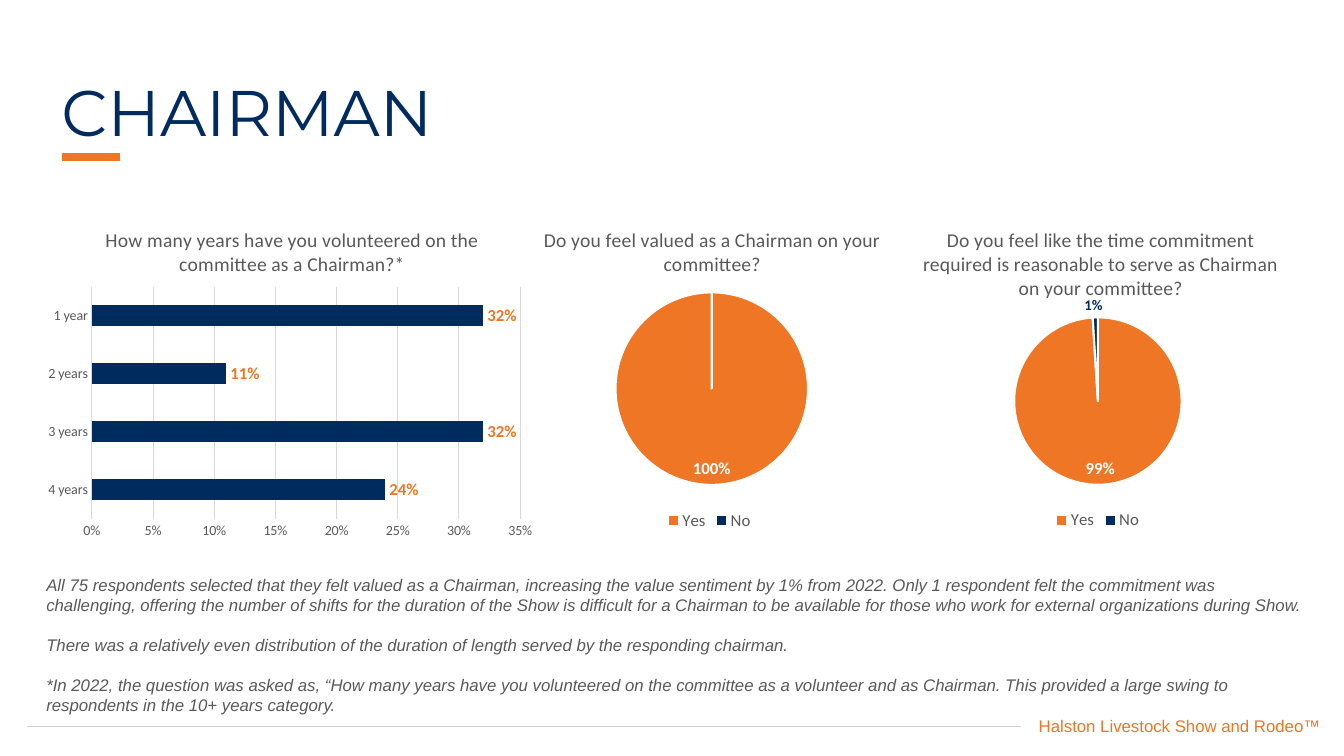
from dataclasses import dataclass

from lxml.etree import SubElement
from pptx import Presentation
from pptx.chart.chart import Chart
from pptx.chart.data import CategoryChartData
from pptx.dml.color import RGBColor
from pptx.enum.chart import XL_CHART_TYPE, XL_LABEL_POSITION, XL_LEGEND_POSITION, XL_TICK_MARK
from pptx.enum.text import MSO_ANCHOR, MSO_AUTO_SIZE, PP_ALIGN
from pptx.oxml.ns import qn
from pptx.oxml.xmlchemy import BaseOxmlElement
from pptx.slide import Slide
from pptx.text.text import Font, TextFrame
from pptx.util import Pt

NAVY = RGBColor(0x00, 0x2B, 0x5F)
ORANGE = RGBColor(0xEE, 0x76, 0x24)
GRAY = RGBColor(0x59, 0x59, 0x59)
SILVER = RGBColor(0xD1, 0xD3, 0xD4)
GRID = RGBColor(0xD9, 0xD9, 0xD9)
WHITE = RGBColor(0xFF, 0xFF, 0xFF)

Box = tuple[float, float, float, float]


@dataclass
class Rule:
    """A level line."""
    left: float
    right: float
    top: float
    color: RGBColor
    width: float


@dataclass
class Graph:
    """A chart with its place, its data and its inner layout in shares."""
    kind: XL_CHART_TYPE
    box: Box
    title: str
    names: list[str]
    values: list[float]
    head: tuple[float, float]
    plot: Box


RULES = [
    Rule(19.5, 729.5, 519, SILVER, 1),
    Rule(44, 86, 112, ORANGE, 6),
]
GRAPHS = [
    Graph(XL_CHART_TYPE.PIE, (339, 147.5, 335.5, 234.5),
          "Do you feel valued as a Chairman on your committee?",
          ["Yes", "No"], [1, 0], (0.14, 0.05), (0.3, 0.26, 0.41, 0.59)),
    Graph(XL_CHART_TYPE.PIE, (616.5, 147, 335.5, 234.5),
          "Do you feel like the time commitment required is reasonable "
          "to serve as Chairman on your committee?",
          ["Yes", "No"], [0.99, 0.01], (0.12, 0.05), (0.32, 0.34, 0.36, 0.51)),
    Graph(XL_CHART_TYPE.BAR_CLUSTERED, (26, 147, 360, 240.5),
          "How many years have you volunteered on the committee as a Chairman?*",
          ["4 years", "3 years", "2 years", "1 year"], [0.24, 0.32, 0.11, 0.32],
          (0.13, 0.05), (0.11, 0.24, 0.85, 0.69)),
]
NOTES = [
    "All 75 respondents selected that they felt valued as a Chairman, increasing the value "
    "sentiment by 1% from 2022. Only 1 respondent felt the commitment was challenging, offering "
    "the number of shifts for the duration of the Show is difficult for a Chairman to be "
    "available for those who work for external organizations during Show.",
    "There was a relatively even distribution of the duration of length served by the "
    "responding chairman.",
    "*In 2022, the question was asked as, “How many years have you volunteered on the committee "
    "as a volunteer and as Chairman. This provided a large swing to respondents in the 10+ "
    "years category.",
]


def style(font: Font, size: float, color: RGBColor, name: str = "Calibri",
          bold: bool = False, italic: bool = False) -> None:
    """Set all traits of a font."""
    font.size, font.name, font.bold, font.italic = Pt(size), name, bold, italic
    font.color.rgb = color


def write(frame: TextFrame, *texts: str, size: float, color: RGBColor, name: str = "Calibri",
          bold: bool = False, italic: bool = False, align: PP_ALIGN = PP_ALIGN.LEFT,
          gap: float = 0, pitch: float = 1) -> None:
    """Fill a frame with one paragraph for each text."""
    for spot, text in enumerate(texts):
        para = frame.add_paragraph() if spot else frame.paragraphs[0]
        para.alignment, para.line_spacing = align, pitch
        para.space_before = Pt(gap if spot else 0)
        run = para.add_run()
        run.text = text
        style(run.font, size, color, name, bold, italic)


def add_box(slide: Slide, box: Box) -> TextFrame:
    """Add a text box that wraps."""
    frame = slide.shapes.add_textbox(*map(Pt, box)).text_frame
    frame.word_wrap = True
    return frame


def add_rule(slide: Slide, rule: Rule) -> None:
    """Draw a rule free of shadow."""
    line = slide.shapes.add_connector(1, Pt(rule.left), Pt(rule.top), Pt(rule.right), Pt(rule.top))
    line.line.color.rgb = rule.color
    line.line.width = Pt(rule.width)
    SubElement(line._element.spPr, qn("a:effectLst"))


def place(part: BaseOxmlElement, index: int, inner: bool, shares: tuple[float, ...]) -> None:
    """Give a chart part a fixed layout."""
    for old in part.findall(qn("c:layout")):
        part.remove(old)
    layout = SubElement(part, qn("c:layout"))
    part.insert(index, layout)
    manual = SubElement(layout, qn("c:manualLayout"))
    if inner:
        SubElement(manual, qn("c:layoutTarget"), val="inner")
    for key in ("xMode", "yMode"):
        SubElement(manual, qn(f"c:{key}"), val="edge")
    for key, share in zip("xywh", shares):
        SubElement(manual, qn(f"c:{key}"), val=str(share))


def dress_pie(chart: Chart) -> None:
    """Color the slices, label the first and add the legend."""
    series = chart.plots[0].series[0]
    for spot, color in enumerate((ORANGE, NAVY)):
        look = series.points[spot].format
        look.fill.solid()
        look.fill.fore_color.rgb = color
        look.line.color.rgb = WHITE
        look.line.width = Pt(1.5)
    series.data_labels.show_value = False
    label = series.points[0].data_label
    style(label.font, 12, WHITE, bold=True)
    label.position = XL_LABEL_POSITION.INSIDE_END
    chart.has_legend = True
    chart.legend.position = XL_LEGEND_POSITION.BOTTOM
    chart.legend.include_in_layout = False
    style(chart.legend.font, 12, GRAY)


def dress_bars(chart: Chart) -> None:
    """Color the bars and set the axes."""
    plot = chart.plots[0]
    plot.gap_width = 182
    series = plot.series[0]
    series.invert_if_negative = False
    series.format.fill.solid()
    series.format.fill.fore_color.rgb = NAVY
    labels = series.data_labels
    labels.show_value = True
    labels.position = XL_LABEL_POSITION.OUTSIDE_END
    style(labels.font, 12, ORANGE, bold=True)
    across, down = chart.value_axis, chart.category_axis
    for axis in (across, down):
        axis.major_tick_mark = axis.minor_tick_mark = XL_TICK_MARK.NONE
        style(axis.tick_labels.font, 10, GRAY)
    across.minimum_scale, across.maximum_scale, across.major_unit = 0, 0.35, 0.05
    across.tick_labels.number_format = "0%"
    across.tick_labels.number_format_is_linked = False
    across.format.line.fill.background()
    for line in (across.major_gridlines.format.line, down.format.line):
        line.color.rgb = GRID
        line.width = Pt(0.75)


def add_graph(slide: Slide, graph: Graph) -> None:
    """Add a chart with its title and look."""
    data = CategoryChartData(number_format="0%")
    data.categories = graph.names
    data.add_series("Series 1", graph.values)
    chart = slide.shapes.add_chart(graph.kind, *map(Pt, graph.box), data).chart
    style(chart.font, 10, GRAY)
    pie = graph.kind == XL_CHART_TYPE.PIE
    chart.plots[0].vary_by_categories = pie
    chart.has_legend = False
    write(chart.chart_title.text_frame, graph.title, size=14, color=GRAY, align=PP_ALIGN.CENTER)
    chart.chart_title.include_in_layout = False
    place(chart.chart_title._element, 1, False, graph.head)
    place(chart._chartSpace.chart.plotArea, 0, True, graph.plot)
    (dress_pie if pie else dress_bars)(chart)


def main() -> None:
    """Build the slide and save it."""
    deck = Presentation()
    deck.slide_width, deck.slide_height = Pt(960), Pt(540)
    slide = deck.slides.add_slide(deck.slide_layouts[5])
    title = slide.shapes.title
    title.left, title.top, title.width, title.height = map(Pt, (36.7, 54, 900, 50))
    title.text_frame.auto_size = MSO_AUTO_SIZE.NONE
    title.text_frame.vertical_anchor = MSO_ANCHOR.TOP
    write(title.text_frame, "CHAIRMAN", size=46, color=NAVY, name="Montserrat", pitch=0.9)
    write(add_box(slide, (496, 507.5, 454.5, 22)), "Halston Livestock Show and Rodeo™",
          size=12, color=ORANGE, name="Arial", align=PP_ALIGN.RIGHT)
    for rule in RULES:
        add_rule(slide, rule)
    for graph in GRAPHS:
        add_graph(slide, graph)
    write(add_box(slide, (767.5, 207.5, 32.5, 20)), "1%", size=10.5, color=NAVY, bold=True)
    write(add_box(slide, (26, 407, 914.5, 109)), *NOTES, size=12, color=GRAY, name="Arial",
          italic=True, gap=14)
    deck.save("out.pptx")


if __name__ == "__main__":
    main()
